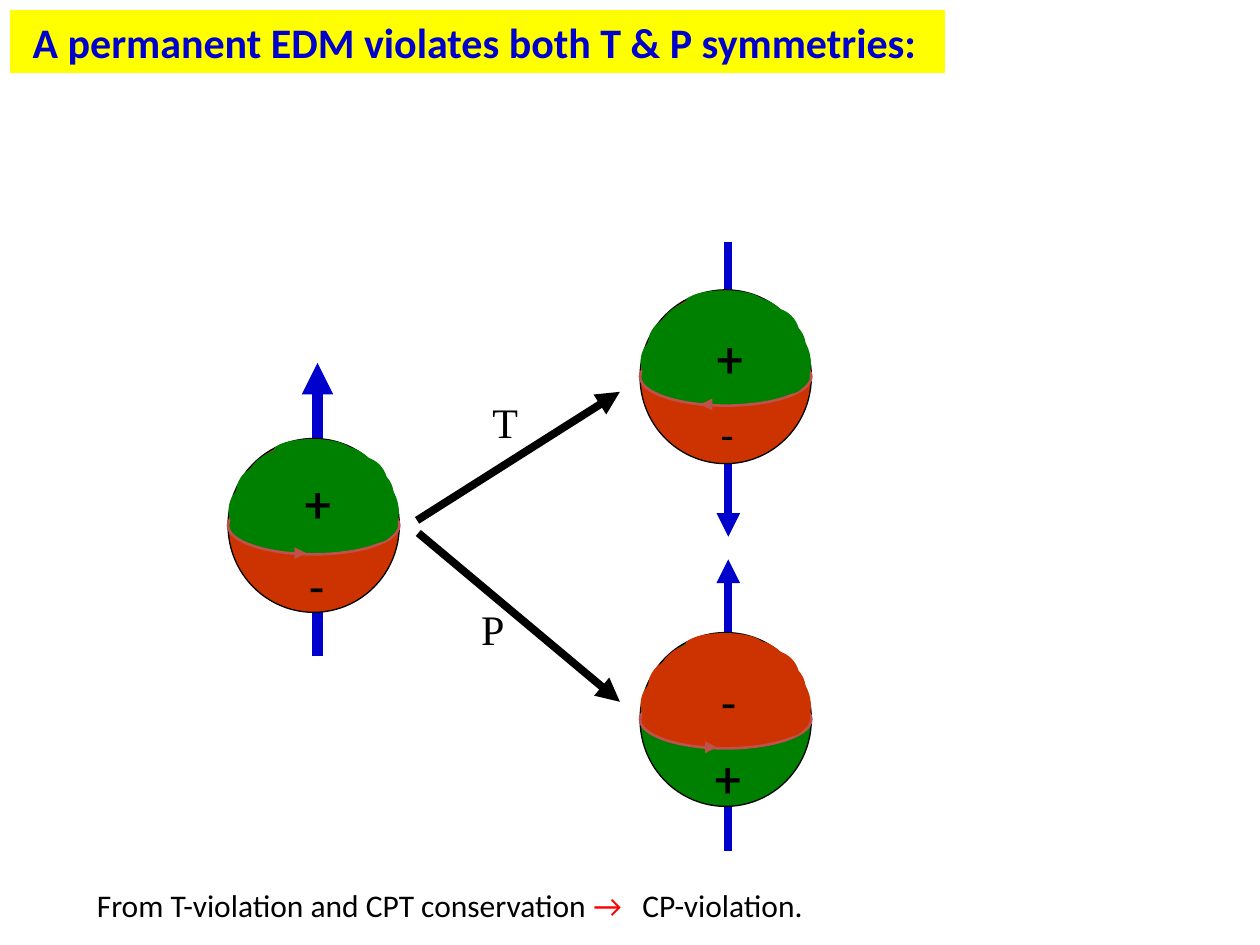
from lxml.etree import SubElement
from pptx import Presentation
from pptx.dml.color import RGBColor
from pptx.enum.shapes import MSO_CONNECTOR, MSO_SHAPE
from pptx.enum.text import MSO_ANCHOR, MSO_AUTO_SIZE, PP_ALIGN
from pptx.oxml.ns import qn
from pptx.util import Inches, Pt

COLORS = {k: RGBColor.from_string(v) for k, v in {
    "blue": "0000CC", "yellow": "FFFF00", "red": "CC3300", "green": "008000",
    "orbit": "C0504D", "black": "000000", "arrow": "FF0000"}.items()}

prs = Presentation()
prs.slide_width, prs.slide_height = Inches(10), Inches(7.5)
s = prs.slides.add_slide(prs.slide_layouts[6])
U = prs.slide_width // 100  # grid of 100 columns by 75 rows


def add_arrow(shapes, ends, color, width):
    """Line between two grid points (x1, y1, x2, y2), with its head at the second."""
    ln = shapes.add_connector(MSO_CONNECTOR.STRAIGHT, *[round(v * U) for v in ends])
    ln.line.color.rgb = COLORS[color]
    ln.line.width = Pt(width)
    SubElement(ln.line._get_or_add_ln(), qn("a:tailEnd"), type="triangle")
    SubElement(ln._element.spPr, qn("a:effectLst"))


def add_label(shapes, box, runs, size, font):
    """Unwrapped text box; runs are (text, colour) pairs. Returns the paragraph."""
    tf = shapes.add_textbox(*[round(v * U) for v in box]).text_frame
    tf.word_wrap = False
    tf.auto_size = MSO_AUTO_SIZE.SHAPE_TO_FIT_TEXT
    p = tf.paragraphs[0]
    for text, color in runs:
        r = p.add_run()
        r.text = text
        r.font.size, r.font.name = Pt(size), font
        r.font.color.rgb = COLORS[color]
    return p


# Title bar
sp = s.shapes.add_shape(MSO_SHAPE.RECTANGLE, *[round(v * U) for v in (0.8, 0.8, 74.2, 5)])
sp.shadow.inherit = False
sp.fill.solid()
sp.fill.fore_color.rgb = COLORS["yellow"]
sp.line.fill.background()
tf = sp.text_frame
tf.word_wrap = True
tf.vertical_anchor = MSO_ANCHOR.MIDDLE
tf.margin_left = round(1.8 * U)
p = tf.paragraphs[0]
p.alignment = PP_ALIGN.JUSTIFY
r = p.add_run()
r.text = "A permanent EDM violates both T & P symmetries:"
r.font.size, r.font.name, r.font.bold = Pt(24), "Calibri", True
r.font.color.rgb = COLORS["blue"]

# Ellipses that cover the upper half of a ball, relative to its corner
PATCHES = [(1.4, 1.6, 11.1, 4), (8.5, 1.6, 4, 4), (3.7, 0.2, 6, 1.8),
           (10.4, 3.6, 3, 4.5), (5.3, 0.7, 6.8, 6.9), (1.4, 1, 6.4, 6.4),
           (0.2, 3.7, 4, 4), (0.8, 2.3, 4, 4), (9, 2.5, 4, 4)]

# Ball corner, lower and upper colour, spin axis, axis width, orbit arrow, charges
BALLS = [
    (18.1, 34.8, "red", "green", (25.2, 52.1, 25.2, 28.8), 6, (23.8, 43.9, 24.3, 43.9),
     [("+", (23.2, 37.1, 4.7, 5.7), 28), ("-", (23.4, 43.7, 3.8, 5.7), 28)]),
    (50.8, 50.2, "green", "red", (57.8, 67.5, 57.8, 44.4), 4.5, (56.4, 59.3, 56.9, 59.3),
     [("+", (55.7, 58.9, 4.7, 5.7), 28), ("-", (56.1, 52.9, 3.8, 5.7), 28)]),
    (50.8, 23, "red", "green", (57.8, 19.2, 57.8, 42.6), 4.5, (56.1, 32.1, 55.6, 32.1),
     [("+", (55.9, 25.6, 4.7, 5.7), 28), ("-", (56.1, 32, 3.5, 5.1), 24)]),
]
for x, y, lower, upper, axis, axis_width, orbit, charges in BALLS:
    ball = s.shapes.add_group_shape().shapes
    add_arrow(ball, axis, "blue", axis_width)
    ellipses = [((0, 0, 13.6, 13.8), lower, "black", 0.75),
                ((0, 4.6, 13.6, 4.6), upper, "orbit", 1.5)]
    ellipses += [(patch, upper, upper, 2.25) for patch in PATCHES]
    for i, ((dx, dy, w, h), fill, line, width) in enumerate(ellipses):
        sp = ball.add_shape(MSO_SHAPE.OVAL, *[round(v * U) for v in (x + dx, y + dy, w, h)])
        sp.shadow.inherit = False
        sp.fill.solid()
        sp.fill.fore_color.rgb = COLORS[fill]
        sp.line.color.rgb = COLORS[line]
        sp.line.width = Pt(width)
        if i == 1:
            add_arrow(ball, orbit, "orbit", 2.25)
    for sign, box, size in charges:
        add_label(ball, box, [(sign, "black")], size, "Roboto Slab")

# Symmetry operations
for name, ends, box in [("T", (33.1, 41.3, 49.2, 31.1), (38.1, 31, 4.2, 5)),
                        ("P", (33.2, 42.3, 49.2, 55.7), (37.2, 47.4, 4, 5))]:
    step = s.shapes.add_group_shape().shapes
    add_arrow(step, ends, "black", 4.5)
    add_label(step, box, [(name, "black")], 24, "Times New Roman")

# Conclusion, with a tab stop after the arrow
p = add_label(s.shapes, (6.7, 69.8, 79.5, 4.4),
              [("From T-violation and CPT conservation ", "black"), ("→", "arrow"),
               ("\tCP-violation.", "black")], 18, "Calibri")
tabs = SubElement(p._p.get_or_add_pPr(), qn("a:tabLst"))
SubElement(tabs, qn("a:tab"), pos=str(round(43.3 * U)), algn="l")

prs.save("out.pptx")
